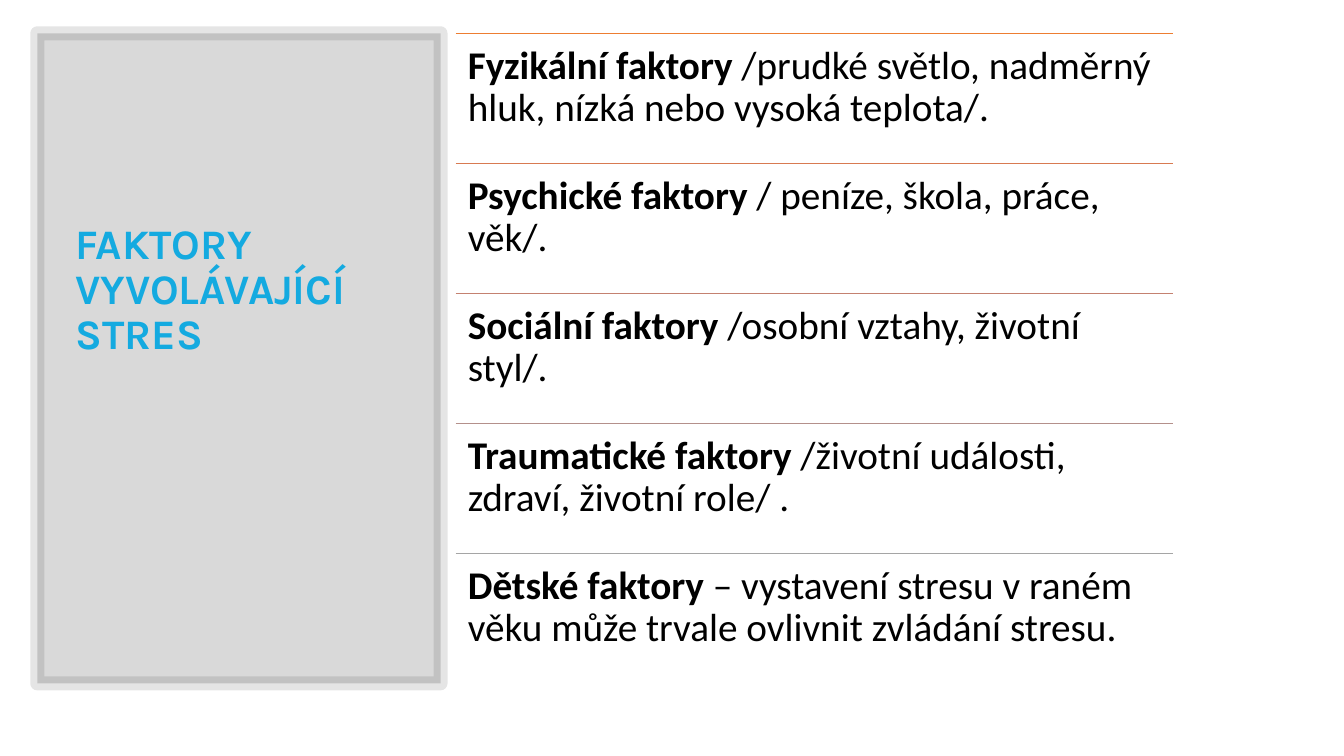
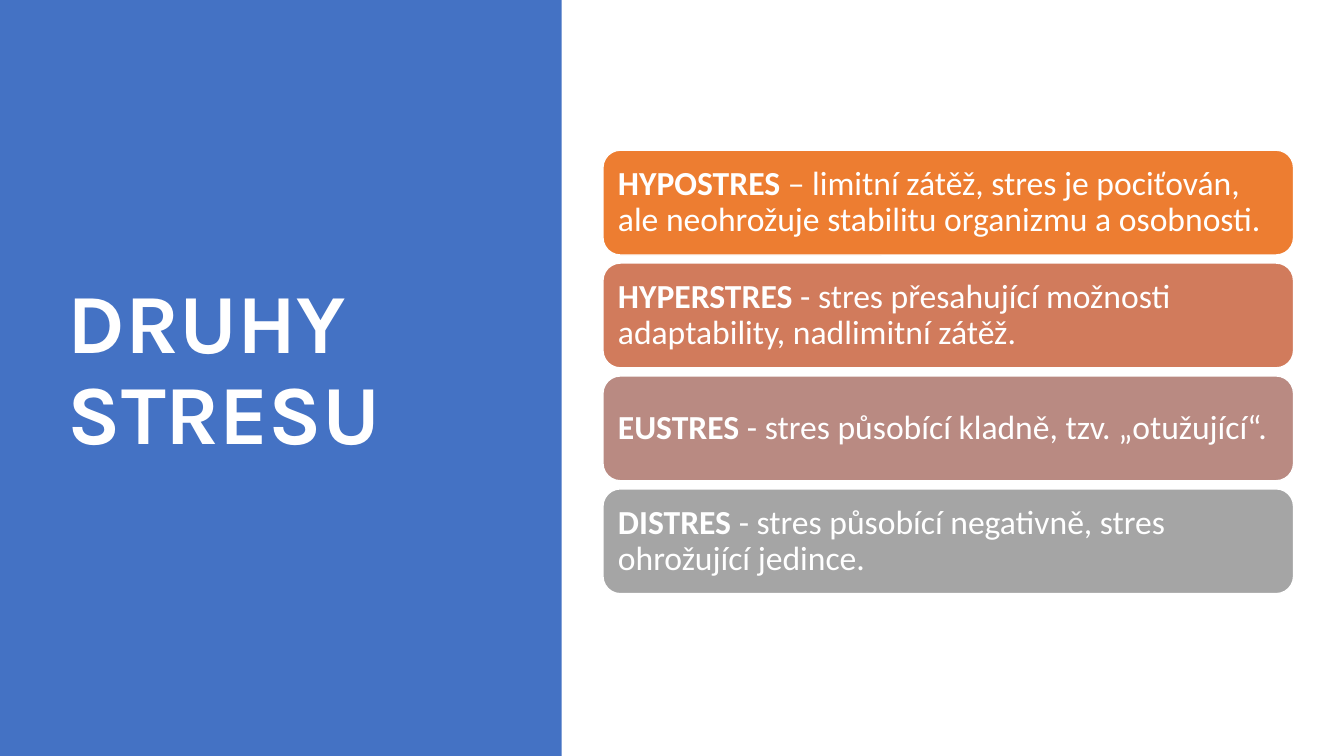
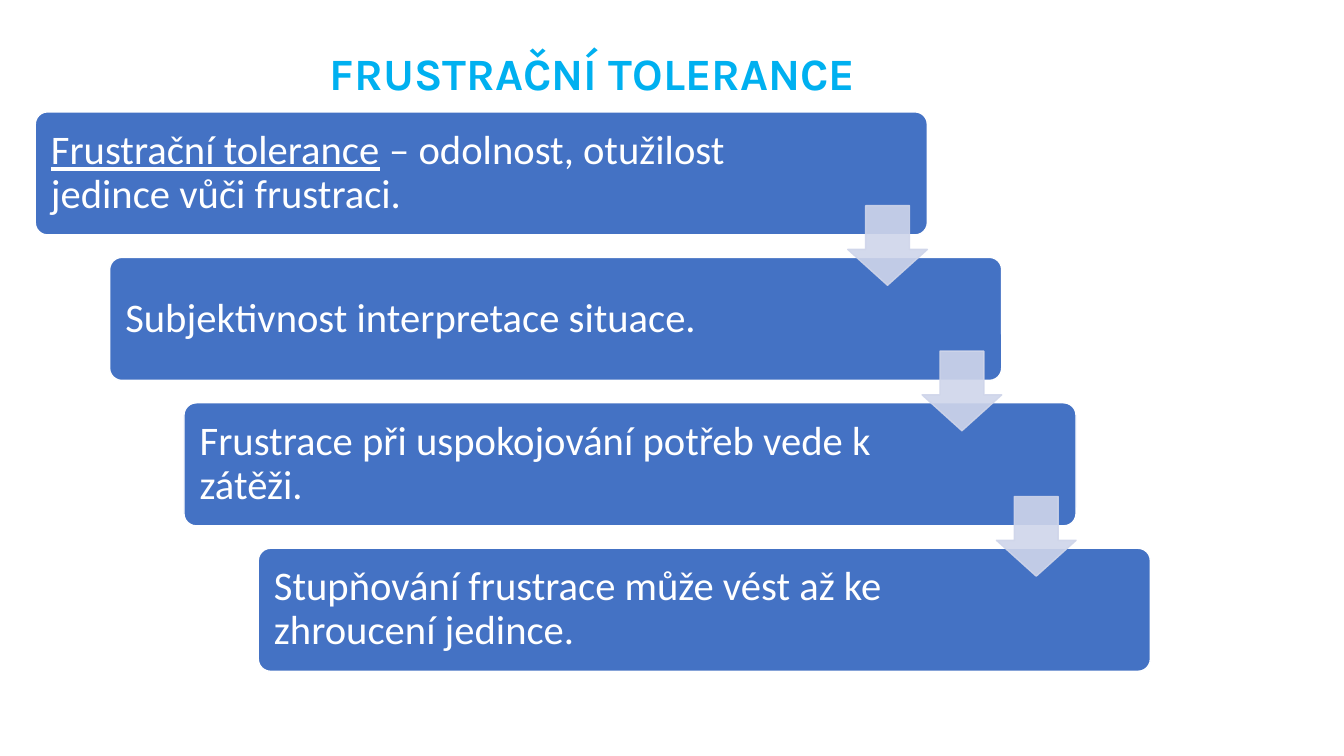
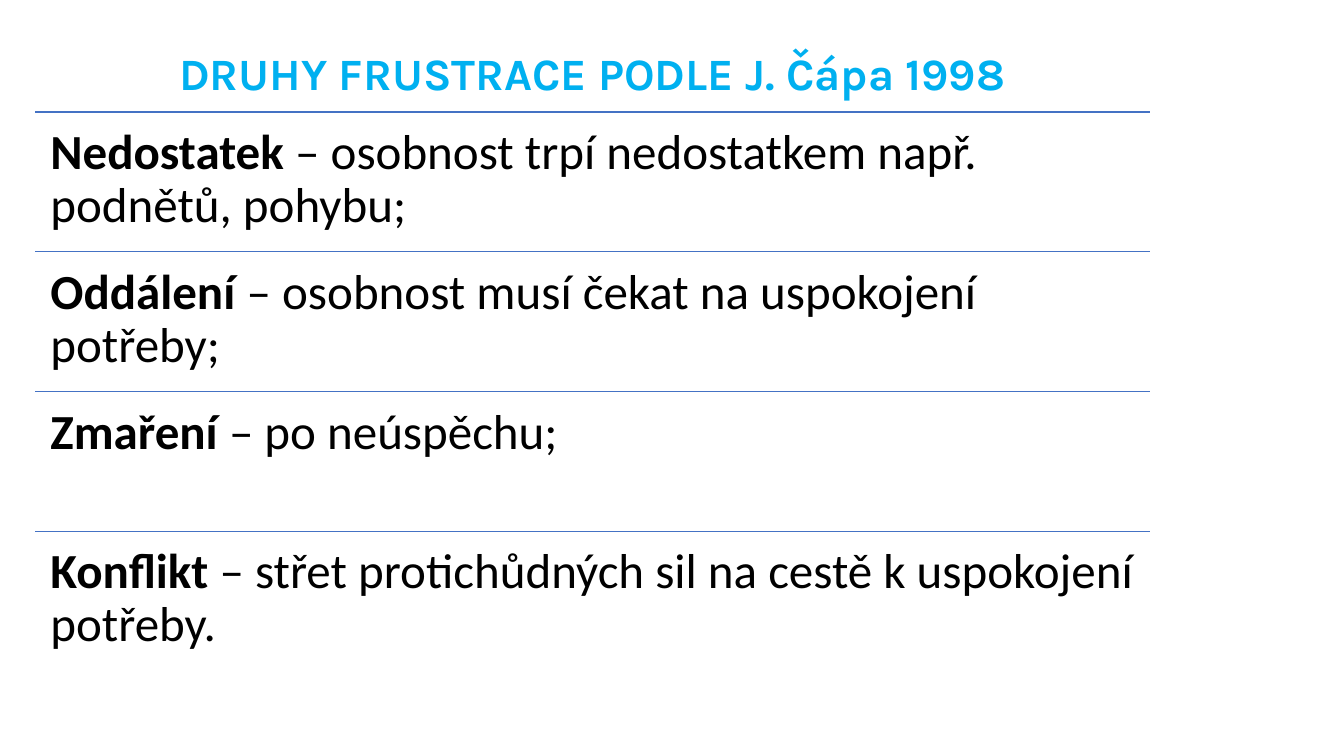
import pptx
import pptx.util
import pptx.dml.color
import pptx.enum.shapes
import pptx.enum.text
import pptx.oxml
import pptx.oxml.ns
from lxml import etree

Inches = pptx.util.Inches
Pt = pptx.util.Pt
Shape = pptx.enum.shapes.MSO_SHAPE
Anchor = pptx.enum.text.MSO_ANCHOR
Align = pptx.enum.text.PP_ALIGN

BLUE, ORANGE, GRAY = "4472C4", "ED7D31", "A5A5A5"
SKY, CYAN, PALE = "14AAE0", "00B0F0", "CFD5EA"
WHITE, BLACK = "FFFFFF", "000000"
HEAD, BODY = "Karla", "Calibri"
AREA = (0.35, 1.11, 11.06, 5.55)


def rgb(code):
    return pptx.dml.color.RGBColor.from_string(code)


def place(box):
    return [Inches(n) for n in box]


def fade(fill, share):
    """Set the opacity of a solid fill, in percent, on its colour element."""
    for color in fill.iter(pptx.oxml.ns.qn("a:srgbClr")):
        alpha = etree.SubElement(color, pptx.oxml.ns.qn("a:alpha"))
        alpha.set("val", str(share * 1000))


def write(shape, parts, font, size, color, pad, anchor=Anchor.MIDDLE,
          align=Align.LEFT, right=None):
    """Fill a shape with one paragraph of (text, style) parts."""
    frame = shape.text_frame
    frame.word_wrap = True
    frame.auto_size = pptx.enum.text.MSO_AUTO_SIZE.NONE
    frame.vertical_anchor = anchor
    frame.margin_left = frame.margin_top = frame.margin_bottom = Inches(pad)
    frame.margin_right = Inches(right or pad)
    para = frame.paragraphs[0]
    para.alignment = align
    para.line_spacing = 0.9
    for text, style in parts:
        run = para.add_run()
        run.text = text
        run.font.name = font
        run.font.size = Pt(size)
        run.font.color.rgb = rgb(color)
        run.font.bold = style == "bold"
        run.font.underline = style == "line"


def start(deck, text, box, size, color, align=Align.LEFT):
    """Add a slide with its title placed and styled."""
    slide = deck.slides.add_slide(deck.slide_layouts[5])
    title = slide.shapes.title
    title.left, title.top, title.width, title.height = place(box)
    write(title, [(text, "bold")], HEAD, size, color, 0.1, align=align)
    return slide


def block(slide, kind, box, fill, edge=None):
    shape = slide.shapes.add_shape(kind, *place(box))
    shape.shadow.inherit = False
    shape.fill.solid()
    shape.fill.fore_color.rgb = rgb(fill)
    if edge:
        shape.line.color.rgb = rgb(edge)
        shape.line.width = Pt(1)
    else:
        shape.line.fill.background()
    return shape


def panel(slide, box, fill, edge=None):
    """Add a rectangle behind the title."""
    shape = block(slide, Shape.RECTANGLE, box, fill, edge)
    slide.shapes.title.element.addprevious(shape.element)
    return shape


def rule(slide, x, y, width, color):
    line = slide.shapes.add_connector(
        pptx.enum.shapes.MSO_CONNECTOR.STRAIGHT, *place((x, y, x + width, y)))
    line.line.color.rgb = rgb(color)
    line.line.width = Pt(1)
    etree.SubElement(line.element.spPr, pptx.oxml.ns.qn("a:effectLst"))


def rows(slide, box, items, colors, size, pad):
    """Stack equal text rows, each under a thin line."""
    x, y, width, height = box
    step = height / len(items)
    for i, ((term, rest), color) in enumerate(zip(items, colors)):
        top = y + i * step
        rule(slide, x, top, width, color)
        text = slide.shapes.add_textbox(*place((x, top, width, step)))
        write(text, [(term, "bold"), (rest, None)], BODY, size, BLACK, pad,
              Anchor.TOP)


def cards(slide, box, items, colors, gap):
    x, y, width, height = box
    tall = (height - gap * (len(items) - 1)) / len(items)
    for i, ((term, rest), color) in enumerate(zip(items, colors)):
        top = y + i * (tall + gap)
        card = block(slide, Shape.ROUNDED_RECTANGLE, (x, top, width, tall),
                     color, WHITE)
        write(card, [(term, "bold"), (rest, None)], BODY, 24, WHITE, 0.1)


def stairs(slide, box, items):
    """Set steps from top left to bottom right, with arrows between them."""
    x, y, width, height = box
    wide, tall, size = width * 0.8, height * 0.22, 0.79
    count = len(items) - 1
    spots = [(x + i * (width - wide) / count, y + i * (height - tall) / count)
             for i in range(count + 1)]
    for (left, top), parts in zip(spots, items):
        stair = block(slide, Shape.ROUNDED_RECTANGLE, (left, top, wide, tall),
                      BLUE, WHITE)
        stair.adjustments[0] = 0.1
        write(stair, parts, BODY, 29, WHITE, 0.12, right=1.65)
    for left, top in spots[:-1]:
        arrow = block(slide, Shape.DOWN_ARROW,
                      (left + wide - size, top + 0.93, size, size), PALE, PALE)
        arrow.adjustments[0] = 0.55
        arrow.adjustments[1] = 0.45
        fade(arrow.element.spPr, 90)


def causes(deck):
    slide = start(deck, "FAKTORY VYVOLÁVAJÍCÍ STRES", (0.65, 0.7, 3.36, 4.37),
                  30, SKY)
    frame = panel(slide, (0.37, 0.33, 4, 6.45), BLACK, BLACK)
    frame.line.width = Pt(10)
    fade(frame.element.spPr.find(pptx.oxml.ns.qn("a:solidFill")), 15)
    fade(frame.element.spPr.find(pptx.oxml.ns.qn("a:ln")), 10)
    rows(slide, (4.52, 0.33, 7.11, 6.45), [
        ("Fyzikální faktory ",
         "/prudké světlo, nadměrný hluk, nízká nebo vysoká teplota/."),
        ("Psychické faktory ", "/ peníze, škola, práce, věk/."),
        ("Sociální faktory ", "/osobní vztahy, životní styl/."),
        ("Traumatické faktory ", "/životní události, zdraví, životní role/ ."),
        ("Dětské faktory ", "– vystavení stresu v raném věku může trvale "
                            "ovlivnit zvládání stresu."),
    ], [ORANGE, "D87A51", "C48170", "B4908B", GRAY], 28, 0.12)


def kinds(deck):
    slide = start(deck, "DRUHY STRESU", (0.57, 0.68, 4.16, 6.02), 60, WHITE)
    panel(slide, (0, 0, 5.57, 7.5), BLUE)
    cards(slide, (5.98, 1.49, 6.85, 4.4), [
        ("HYPOSTRES", " – limitní zátěž, stres je pociťován, ale neohrožuje "
                      "stabilitu organizmu a osobnosti."),
        ("HYPERSTRES",
         " - stres přesahující možnosti adaptability, nadlimitní zátěž."),
        ("EUSTRES ", "- stres působící kladně, tzv. „otužující“."),
        ("DISTRES ", "- stres působící negativně, stres ohrožující jedince."),
    ], [ORANGE, "D17B5C", "B98A82", GRAY], 0.08)


def topic(deck, text):
    """Start a slide with a centred title above the main area."""
    return start(deck, text, (0.35, 0.4, 11.06, 0.71), 32, CYAN, Align.CENTER)


def limits(deck):
    slide = topic(deck, "FRUSTRAČNÍ TOLERANCE")
    stairs(slide, AREA, [
        [("Frustrační tolerance", "line"),
         (" – odolnost, otužilost jedince vůči frustraci.", None)],
        [("Subjektivnost interpretace situace.", None)],
        [("Frustrace při uspokojování potřeb vede k zátěži.", None)],
        [("Stupňování frustrace může vést až ke zhroucení jedince.", None)],
    ])


def types(deck):
    slide = topic(deck, "DRUHY FRUSTRACE PODLE J. Čápa 1998")
    rows(slide, AREA, [
        ("Nedostatek", " – osobnost trpí nedostatkem např. podnětů, pohybu;"),
        ("Oddálení", " – osobnost musí čekat na uspokojení potřeby;"),
        ("Zmaření", " – po neúspěchu;"),
        ("Konflikt",
         " – střet protichůdných sil na cestě k uspokojení potřeby."),
    ], [BLUE] * 4, 35, 0.15)


def main():
    deck = pptx.Presentation()
    deck.slide_width, deck.slide_height = Inches(13.33), Inches(7.5)
    for build in (causes, kinds, limits, types):
        build(deck)
    deck.save("out.pptx")


if __name__ == "__main__":
    main()
